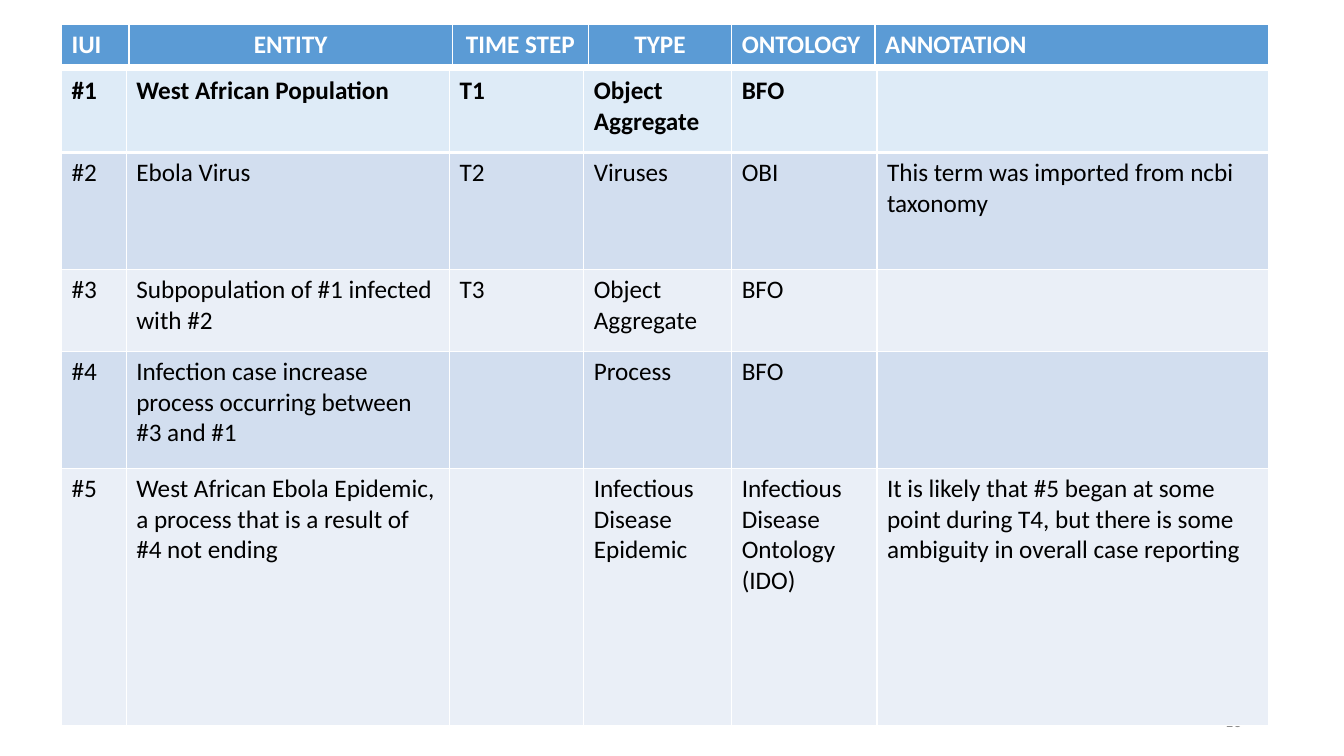
from lxml.etree import SubElement
from pptx import Presentation
from pptx.dml.color import RGBColor
from pptx.enum.text import MSO_ANCHOR, PP_ALIGN
from pptx.oxml.ns import qn
from pptx.util import Cm, Pt

HUES = {"head": "5B9BD5", "first": "DEEBF7", "dark": "D2DEEF", "light": "EAEFF7",
        "white": "FFFFFF", "black": "000000", "gray": "8C8C8C"}
LEFT = 1.55
HEADS = ["IUI", "ENTITY", "TIME STEP", "TYPE", "ONTOLOGY", "ANNOTATION"]
ROWS = [
    ["#1", "West African Population", "T1", "Object Aggregate", "BFO", ""],
    ["#2", "Ebola Virus", "T2", "Viruses", "OBI",
     "This term was imported from ncbi taxonomy"],
    ["#3", "Subpopulation of #1 infected with #2", "T3", "Object Aggregate", "BFO", ""],
    ["#4", "Infection case increase process occurring between #3 and #1", "",
     "Process", "BFO", ""],
    ["#5", "West African Ebola Epidemic, a process that is a result of #4 not ending", "",
     "Infectious Disease Epidemic", "Infectious Disease Ontology (IDO)",
     "It is likely that #5 began at some point during T4, but there is some "
     "ambiguity in overall case reporting"],
]


class Deck:
    face = "Calibri"

    def __init__(self, wide, high):
        self.file = Presentation()
        self.file.slide_width, self.file.slide_height = Cm(wide), Cm(high)
        self.slide = self.file.slides.add_slide(self.file.slide_layouts[6])

    def words(self, frame, text, hue, size=18, bold=False, align=PP_ALIGN.LEFT):
        para = frame.paragraphs[0]
        para.alignment = align
        font = para.font
        if text:
            run = para.add_run()
            run.text = text
            font = run.font
        style = {"name": self.face, "size": Pt(size), "bold": bold}
        for key, value in style.items():
            setattr(font, key, value)
        font.color.rgb = RGBColor.from_string(HUES[hue])

    def label(self, text, box, **style):
        frame = self.slide.shapes.add_textbox(*map(Cm, box)).text_frame
        frame.word_wrap = True
        frame.vertical_anchor = MSO_ANCHOR.MIDDLE
        self.words(frame, text, **style)

    def edge(self, cell, widths):
        props = cell._tc.get_or_add_tcPr()
        for side, width in widths.items():
            line = SubElement(props, qn("a:ln" + side), w=str(Pt(width)))
            fill = SubElement(line, qn("a:solidFill"))
            SubElement(fill, qn("a:srgbClr"), val=HUES["white"])

    def table(self, top, cols, highs, rows, fills, hue, aligns=None):
        box = map(Cm, (LEFT, top, sum(cols), sum(highs)))
        grid = self.slide.shapes.add_table(len(rows), len(cols), *box).table
        grid.first_row = grid.horz_banding = False
        for col, width in zip(grid.columns, cols):
            col.width = Cm(width)
        for r, (row, high) in enumerate(zip(rows, highs)):
            grid.rows[r].height = Cm(high)
            sides = {"L": 1, "R": 1, "T": 1, "B": 3} if r == 0 else {"L": 1, "R": 1, "B": 1}
            for c, text in enumerate(row):
                cell = grid.cell(r, c)
                self.edge(cell, sides)
                cell.fill.solid()
                cell.fill.fore_color.rgb = RGBColor.from_string(HUES[fills[r]])
                align = aligns[c] if aligns else PP_ALIGN.LEFT
                self.words(cell.text_frame, text, hue, bold=r == 0, align=align)


def main():
    deck = Deck(33.87, 19.05)
    deck.label("16", (23.93, 17.65, 7.62, 1.02), hue="gray", size=12, align=PP_ALIGN.RIGHT)
    deck.table(1.78, [1.63, 8.15, 3.38, 3.73, 3.66, 9.86], [2.06, 2.95, 2.06, 2.95, 6.48],
               ROWS, ["first"] + ["dark", "light"] * 2, "black")
    left, mid = PP_ALIGN.LEFT, PP_ALIGN.CENTER
    deck.table(0.61, [1.7, 8.15, 3.43, 3.61, 3.61, 9.93], [1.04],
               [HEADS], ["head"], "white", [left, mid, mid, mid, left, left])
    deck.file.save("out.pptx")


if __name__ == "__main__":
    main()
